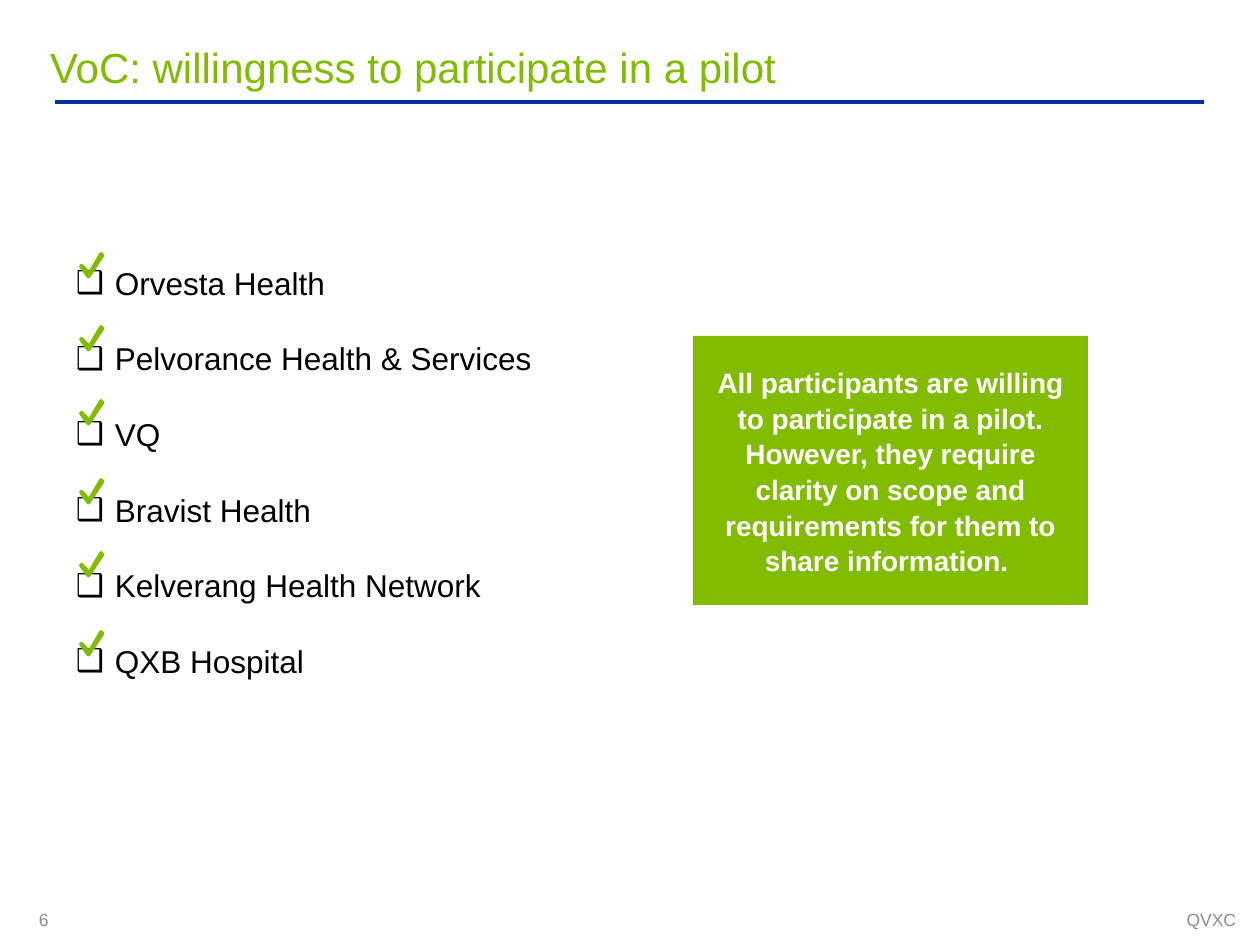
from lxml.etree import SubElement
from pptx import Presentation
from pptx.dml.color import RGBColor
from pptx.enum.shapes import MSO_CONNECTOR as CONNECTOR, MSO_SHAPE as SHAPE
from pptx.enum.text import MSO_ANCHOR as ANCHOR, PP_ALIGN as ALIGN
from pptx.oxml.ns import qn
from pptx.util import Pt

PX = 914400 / 126
GREEN, BLUE, GRAY = "81BC00", "003399", "8C8C8C"


def px(*lengths):
    return [round(length * PX) for length in lengths]


def write(shape, *lines, size=18, color="000000", bold=False, align=ALIGN.LEFT,
          anchor=ANCHOR.TOP, spacing=None, insets=(0, 0), wrap=True, bullet=None):
    frame = shape.text_frame
    frame.word_wrap = wrap
    frame.vertical_anchor = anchor
    frame.margin_left = frame.margin_right = px(insets[0])[0]
    frame.margin_top = frame.margin_bottom = px(insets[1])[0]
    for index, line in enumerate(lines):
        para = frame.add_paragraph() if index else frame.paragraphs[0]
        para.alignment = align
        if spacing:
            para.line_spacing = spacing
        if bullet:
            props = para._p.get_or_add_pPr()
            indent = px(39)[0]
            props.set("marL", str(indent))
            props.set("indent", str(-indent))
            SubElement(props, qn("a:buFont")).set("typeface", "Arial")
            SubElement(props, qn("a:buChar")).set("char", bullet)
        span = para.add_run()
        span.text = line
        span.font.name = "Arial"
        span.font.size = Pt(size)
        span.font.bold = bold
        span.font.color.rgb = RGBColor.from_string(color)


deck = Presentation()
deck.slide_width, deck.slide_height = px(1260, 945)
page = deck.slides.add_slide(deck.slide_layouts[5])
shapes = page.shapes

# Title and the rule beneath it
title = shapes.title
title.left, title.top, title.width, title.height = px(50, 41, 1159, 74)
write(title, "VoC: willingness to participate in a pilot", size=24, color=GREEN)

rule = shapes.add_connector(CONNECTOR.STRAIGHT, *px(55, 102, 1204, 102))
rule.line.color.rgb = RGBColor.from_string(BLUE)
rule.line.width = Pt(2.25)
SubElement(rule._element.spPr, qn("a:effectLst"))

# Footer
number = shapes.add_textbox(*px(26, 903, 47, 34))
write(number, "6", size=10, color=GRAY, anchor=ANCHOR.MIDDLE,
      insets=(13, 6), wrap=False)
footer = shapes.add_textbox(*px(861, 909, 375, 21))
write(footer, "QVXC", size=10, color=GRAY, align=ALIGN.RIGHT, anchor=ANCHOR.MIDDLE)

# Conclusion box
conclusion = shapes.add_shape(SHAPE.RECTANGLE, *px(693, 336, 395, 269))
conclusion.shadow.inherit = False
conclusion.fill.solid()
conclusion.fill.fore_color.rgb = RGBColor.from_string(GREEN)
conclusion.line.fill.background()
write(conclusion, "All participants are willing to participate in a pilot. However, "
      "they require clarity on scope and requirements for them to share information. ",
      size=16, color="FFFFFF", bold=True, align=ALIGN.CENTER,
      anchor=ANCHOR.MIDDLE, spacing=1.06, insets=(13, 13))

# Participant list
participants = shapes.add_textbox(*px(63, 220, 520, 471))
write(participants, "Orvesta Health", "Pelvorance Health & Services", "VQ",
      "Bravist Health", "Kelverang Health Network", "QXB Hospital",
      spacing=2.0, insets=(13, 6), bullet="❑")

# Check marks, outlined in tenths of a px
CHECK = [(100, 265), (85, 263), (75, 252), (12, 164), (2, 145), (10, 126),
         (28, 120), (45, 131), (100, 189), (202, 15), (218, 2), (237, 8),
         (252, 30), (248, 50), (115, 252)]
for top in (252, 325, 399, 478, 551, 630):
    outline = shapes.build_freeform(*CHECK[0], scale=PX / 10)
    outline.add_line_segments(CHECK[1:], close=True)
    check = outline.convert_to_shape(*px(79, top))
    check.shadow.inherit = False
    check.fill.solid()
    check.fill.fore_color.rgb = RGBColor.from_string(GREEN)
    check.line.fill.background()

deck.save("out.pptx")
